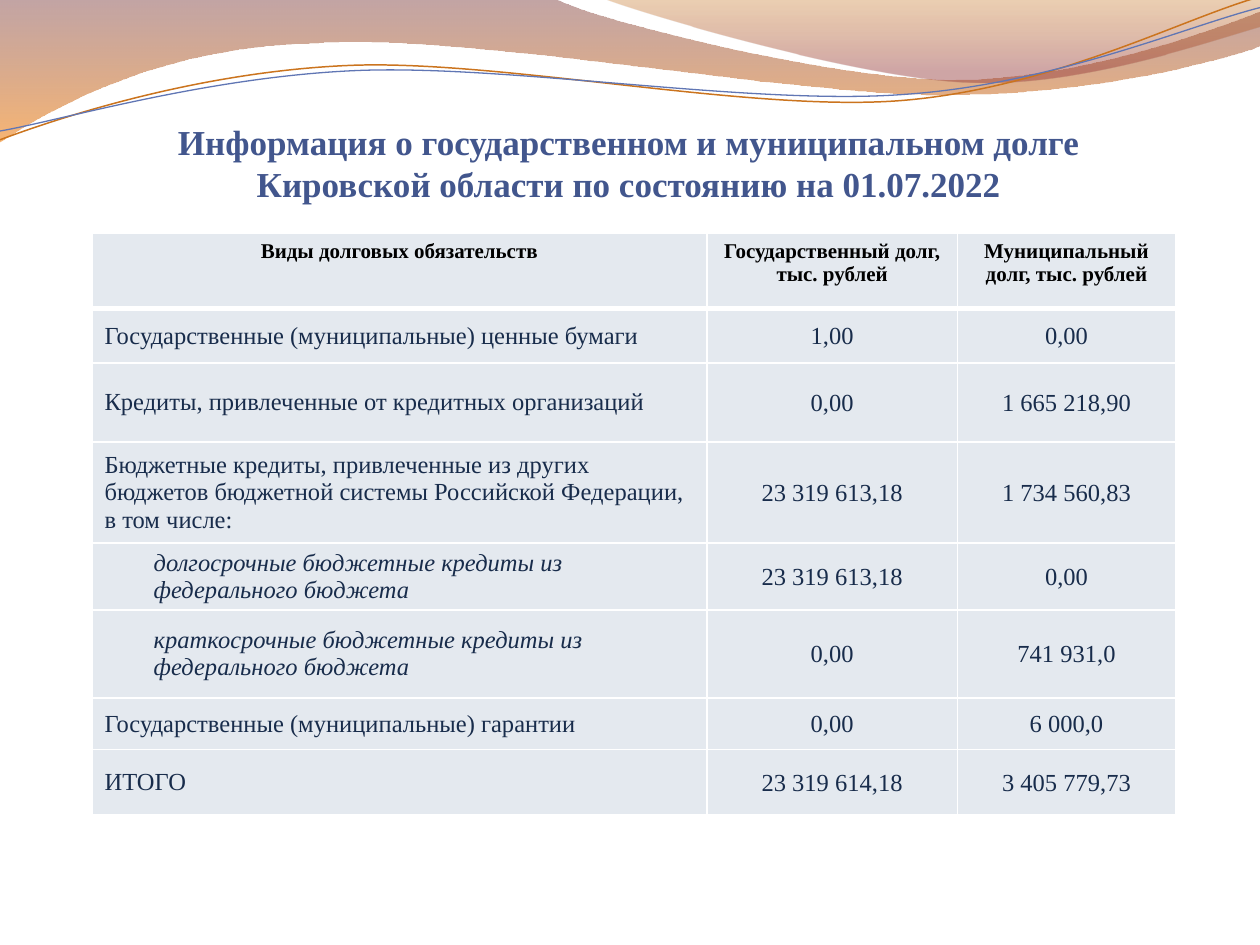
import math

from lxml import etree
from pptx import Presentation
from pptx import util as u
from pptx.dml.color import RGBColor
from pptx.enum import text
from pptx.oxml.ns import qn

FONT = "Times New Roman"
WHITE = RGBColor(0xFF, 0xFF, 0xFF)
BLACK = RGBColor(0x00, 0x00, 0x00)
TITLE_BLUE = RGBColor(0x42, 0x56, 0x8D)
NAVY = RGBColor(0x18, 0x2C, 0x4B)
CELL_GREY = RGBColor(0xE4, 0xE9, 0xEF)
MAROON = RGBColor(0x79, 0x37, 0x37)
BRICK = RGBColor(0x97, 0x3B, 0x3B)
ORANGE = RGBColor(0xF0, 0x78, 0x00)
RUST = RGBColor(0xC0, 0x62, 0x03)
LINE_ORANGE = RGBColor(0xCB, 0x74, 0x1E)
LINE_BLUE = RGBColor(0x60, 0x76, 0xB4)
TILT = 2.7

BROAD_WAVE = [
    [(0, 0)], [(4.4, -0.01)],
    [(4.76, 0.17), (6.64, 0.63), (7.58, 0.63)],
    [(8.53, 0.63), (9.58, 0.26), (10, 0.09)],
    [(10.01, 0.36)],
    [(9.83, 0.44), (8.7, 0.76), (7.46, 0.75)],
    [(6.22, 0.75), (3.82, 0.28), (2.57, 0.34)],
    [(1.29, 0.36), (0.46, 0.83), (-0.01, 1.13)],
    [(0, 0)],
]
RIGHT_WAVE = [
    [(4.79, -0.01)],
    [(5.09, 0.11), (6.82, 0.62), (7.69, 0.65)],
    [(8.56, 0.69), (9.61, 0.32), (10, 0.21)],
    [(10, 0)], [(4.79, -0.01)],
]
ORANGE_LINE = [
    [(0, 1.11)],
    [(0.48, 0.93), (1.58, 0.57), (2.77, 0.52)],
    [(3.95, 0.47), (5.93, 0.89), (7.13, 0.8)],
    [(8.33, 0.71), (9.38, 0.15), (9.98, -0.02)],
]
BLUE_LINE = [
    [(0, 1.04)],
    [(0.47, 0.96), (1.64, 0.61), (2.83, 0.56)],
    [(4.03, 0.51), (5.97, 0.84), (7.17, 0.75)],
    [(8.36, 0.67), (9.41, 0.21), (10, 0.06)],
]

COLUMNS = [4.88, 1.99, 1.73]
ROWS = [0.6, 0.43, 0.63, 0.8, 0.52, 0.7, 0.41, 0.52]
HEADER = ["Виды долговых обязательств", "Государственный долг, тыс. рублей",
          "Муниципальный долг, тыс. рублей"]
DEBTS = [
    ["Государственные (муниципальные) ценные бумаги", "1,00", "0,00"],
    ["Кредиты, привлеченные от кредитных организаций", "0,00", "1 665 218,90"],
    ["Бюджетные кредиты, привлеченные из других бюджетов бюджетной системы "
     "Российской Федерации, \vв том числе:", "23 319 613,18", "1 734 560,83"],
    ["долгосрочные бюджетные кредиты из федерального бюджета",
     "23 319 613,18", "0,00"],
    ["краткосрочные бюджетные кредиты из федерального бюджета",
     "0,00", "741 931,0"],
    ["Государственные (муниципальные) гарантии", "0,00", "6 000,0"],
    ["ИТОГО", "23 319 614,18", "3 405 779,73"],
]
SUBITEM_ROWS = (4, 5)


class SlideMaker:
    def __init__(self, page):
        self.page = page

    def style(self, para, size, color, bold=False, italic=False):
        for span in para.runs:
            font = span.font
            font.name, font.size = FONT, u.Pt(size)
            font.bold, font.italic = bold, italic
            font.color.rgb = color

    def outline(self, segments, frame, tilt=0, close=False):
        left, top, width, height = frame
        ends = [(u.Inches(x), u.Inches(y)) for x, y in (part[-1] for part in segments)]
        builder = self.page.shapes.build_freeform(*ends[0])
        builder.add_line_segments(ends[1:], close=close)
        shape = builder.convert_to_shape()
        shape.left, shape.top = u.Inches(left), u.Inches(top)
        shape.width, shape.height = u.Inches(width), u.Inches(height)
        shape.rotation = -tilt % 360
        shape.shadow.inherit = False

        sine, cosine = math.sin(math.radians(tilt)), math.cos(math.radians(tilt))
        track = next(shape.element.iter(qn("a:path")))
        track.clear()
        track.set("w", str(u.Inches(width)))
        track.set("h", str(u.Inches(height)))
        for index, part in enumerate(segments):
            kind = "moveTo" if index == 0 else "cubicBezTo" if len(part) == 3 else "lnTo"
            step = etree.SubElement(track, qn(f"a:{kind}"))
            for x, y in part:
                across, down = x - left - width / 2, y - top - height / 2
                local_x = across * cosine - down * sine + width / 2
                local_y = across * sine + down * cosine + height / 2
                etree.SubElement(step, qn("a:pt"), x=str(u.Inches(local_x)),
                                 y=str(u.Inches(local_y)))
        if close:
            etree.SubElement(track, qn("a:close"))
        return shape

    def wave(self, segments, frame, stops):
        shape = self.outline(segments, frame, close=True)
        shape.line.fill.background()
        shape.fill.gradient()
        shape.fill.gradient_angle = 270
        for stop, (position, color, _) in zip(shape.fill.gradient_stops, stops):
            stop.position = position
            stop.color.rgb = color
        for node, (_, _, opacity) in zip(shape.element.iter(qn("a:srgbClr")), stops):
            etree.SubElement(node, qn("a:alpha"), val=str(opacity * 1000))

    def curve(self, segments, frame, color, width):
        shape = self.outline(segments, frame, tilt=TILT)
        shape.fill.background()
        shape.line.color.rgb = color
        shape.line.width = u.Pt(width)

    def title(self, wording, left, top, width, height):
        box = self.page.shapes.title
        box.element.getparent().append(box.element)
        box.left, box.top = u.Inches(left), u.Inches(top)
        box.width, box.height = u.Inches(width), u.Inches(height)
        frame = box.text_frame
        frame.text = wording
        frame.auto_size = text.MSO_AUTO_SIZE.NONE
        frame.word_wrap = True
        frame.vertical_anchor = text.MSO_ANCHOR.BOTTOM
        frame.margin_left = frame.margin_right = frame.margin_bottom = 0
        frame.margin_top = u.Inches(0.05)
        para = frame.paragraphs[0]
        para.alignment = text.PP_ALIGN.CENTER
        self.style(para, 20, TITLE_BLUE, bold=True)

    def border(self, cell, side, width):
        line = etree.SubElement(cell._tc.get_or_add_tcPr(), qn(f"a:ln{side}"),
                                w=str(u.Pt(width)))
        fill = etree.SubElement(line, qn("a:solidFill"))
        etree.SubElement(fill, qn("a:srgbClr"), val=str(WHITE))

    def cell(self, cell, wording, row, column):
        thick = {0: "B", 1: "T"}.get(row)
        for side in "LRTB":
            self.border(cell, side, 3 if side == thick else 1)
        cell.fill.solid()
        cell.fill.fore_color.rgb = CELL_GREY
        cell.text = wording
        para = cell.text_frame.paragraphs[0]
        if row == 0 or column > 0:
            para.alignment = text.PP_ALIGN.CENTER
        if row == 0:
            self.style(para, 12, BLACK, bold=True)
            return
        cell.vertical_anchor = text.MSO_ANCHOR.MIDDLE
        subitem = row in SUBITEM_ROWS and column == 0
        if subitem:
            properties = para._p.get_or_add_pPr()
            properties.set("marL", str(u.Inches(0.39)))
            properties.set("indent", "0")
        if column > 0:
            cell.margin_left = cell.margin_right = cell.margin_top = u.Inches(0.01)
            cell.margin_bottom = 0
        self.style(para, 14, NAVY, italic=subitem)

    def table(self, content, left, top):
        grid = self.page.shapes.add_table(
            len(ROWS), len(COLUMNS), u.Inches(left), u.Inches(top),
            u.Inches(sum(COLUMNS)), u.Inches(sum(ROWS))).table
        for column, width in zip(grid.columns, COLUMNS):
            column.width = u.Inches(width)
        for row, height in zip(grid.rows, ROWS):
            row.height = u.Inches(height)
        for r, wordings in enumerate(content):
            for c, wording in enumerate(wordings):
                self.cell(grid.cell(r, c), wording, r, c)


def main():
    deck = Presentation()
    deck.slide_width, deck.slide_height = u.Inches(10), u.Inches(7.5)
    maker = SlideMaker(deck.slides.add_slide(deck.slide_layouts[5]))
    maker.wave(BROAD_WAVE, (-0.01, -0.01, 10.02, 1.14), [(0, MAROON, 45), (1, ORANGE, 55)])
    maker.wave(RIGHT_WAVE, (4.79, -0.01, 5.21, 0.7), [(0, RUST, 30), (0.8, BRICK, 45)])
    maker.curve(ORANGE_LINE, (-0.02, 0.22, 10.02, 0.71), LINE_ORANGE, 0.85)
    maker.curve(BLUE_LINE, (-0.02, 0.3, 10.03, 0.58), LINE_BLUE, 0.75)
    maker.title("Информация о государственном и муниципальном долге\v"
                "Кировской области по состоянию на 01.07.2022", 0.57, 0.68, 8.84, 0.94)
    maker.table([HEADER, *DEBTS], 0.73, 1.85)
    deck.save("out.pptx")


if __name__ == "__main__":
    main()
